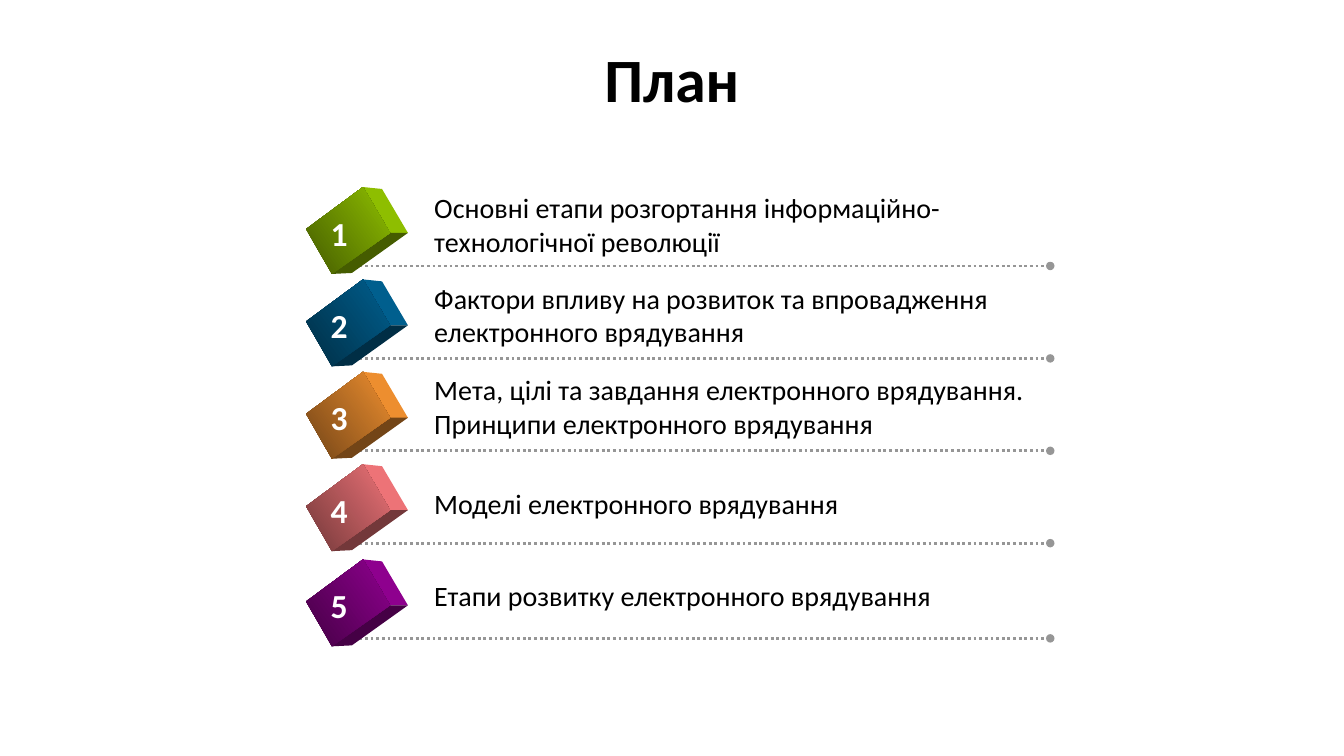
from lxml import etree
from pptx import Presentation
from pptx.dml.color import RGBColor
from pptx.enum import dml, shapes, text
from pptx.oxml import ns
from pptx.util import Pt

BLACK = RGBColor(0x00, 0x00, 0x00)
WHITE = RGBColor(0xFF, 0xFF, 0xFF)
GRAY = RGBColor(0x96, 0x96, 0x96)
GREEN = RGBColor(0x99, 0xCC, 0x00)
BLUE = RGBColor(0x00, 0x66, 0x99)
ORANGE = RGBColor(0xFF, 0x99, 0x33)
PINK = RGBColor(0xFF, 0x7C, 0x80)
PURPLE = RGBColor(0x99, 0x00, 0x99)

FONT = "Calibri"
LIT, DARK = 0.93, 0.45
FRONT = [(218.6, -26.4), (259.3, -56.4), (278.6, -23.6), (237.1, 5.7)]
SIDE = [(259.3, -56.4), (272.9, -55), (291.4, -23.6), (278.6, -23.6)]
BOTTOM = [(278.6, -23.6), (291.4, -23.6), (251.4, 5), (237.1, 5.7)]

ITEMS = [
    (190, 132.5, 55.4, GREEN, "Основні етапи розгортання інформаційно-технологічної революції"),
    (256, 197.3, 55.4, BLUE, "Фактори впливу на розвиток та впровадження електронного врядування"),
    (322, 262.8, 55.4, ORANGE,
     "Мета, цілі та завдання електронного врядування. Принципи електронного врядування"),
    (388, 344.2, 31.5, PINK, "Моделі електронного врядування"),
    (456, 409.7, 31.5, PURPLE, "Етапи розвитку електронного врядування"),
]


def shade(color, factor):
    return RGBColor(*(round(channel * factor) for channel in color))


def add_text(page, words, left, top, width, height, size, color=BLACK, bold=False, wrap=True):
    box = page.shapes.add_textbox(Pt(left), Pt(top), Pt(width), Pt(height))
    box.text_frame.word_wrap = wrap
    para = box.text_frame.paragraphs[0]
    span = para.add_run()
    span.text = words
    span.font.name = FONT
    span.font.size = Pt(size)
    span.font.bold = bold
    span.font.color.rgb = color
    return box


def add_title(page, words):
    box = add_text(page, words, 66, 28.8, 828, 60, 44, bold=True)
    box.text_frame.vertical_anchor = text.MSO_ANCHOR.MIDDLE
    para = box.text_frame.paragraphs[0]
    para.alignment = text.PP_ALIGN.CENTER
    para.line_spacing = 0.9


def add_rule(page, y):
    rule = page.shapes.add_connector(
        shapes.MSO_CONNECTOR.STRAIGHT, Pt(252.7), Pt(y), Pt(750.2), Pt(y))
    rule.line.color.rgb = GRAY
    rule.line.width = Pt(2)
    rule.line.dash_style = dml.MSO_LINE.ROUND_DOT
    etree.SubElement(rule.line._get_or_add_ln(), ns.qn("a:tailEnd"), type="oval")
    etree.SubElement(rule._element.spPr, ns.qn("a:effectLst"))


def add_face(block, corners, y):
    points = [(Pt(x), Pt(y + rise)) for x, rise in corners]
    builder = block.shapes.build_freeform(*points[0])
    builder.add_line_segments(points[1:], close=True)
    face = builder.convert_to_shape()
    face.shadow.inherit = False
    face.line.fill.background()
    return face


def add_block(page, y, color):
    block = page.shapes.add_group_shape()
    for corners, factor in ((SIDE, LIT), (BOTTOM, DARK)):
        face = add_face(block, corners, y)
        face.fill.solid()
        face.fill.fore_color.rgb = shade(color, factor)
    front = add_face(block, FRONT, y)
    front.fill.gradient()
    front.fill.gradient_angle = 36
    for stop, factor in zip(front.fill.gradient_stops, (DARK, LIT)):
        stop.color.rgb = shade(color, factor)


def main():
    deck = Presentation()
    deck.slide_width, deck.slide_height = Pt(960), Pt(540)
    page = deck.slides.add_slide(deck.slide_layouts[6])
    add_title(page, "План")
    for number, (y, top, height, color, words) in enumerate(ITEMS, 1):
        add_rule(page, y)
        add_block(page, y, color)
        add_text(page, str(number), 229, y - 41.8, 36.7, 36, 24, WHITE, bold=True, wrap=False)
        add_text(page, words, 303.1, top, 465, height, 20)
    deck.save("out.pptx")


if __name__ == "__main__":
    main()
